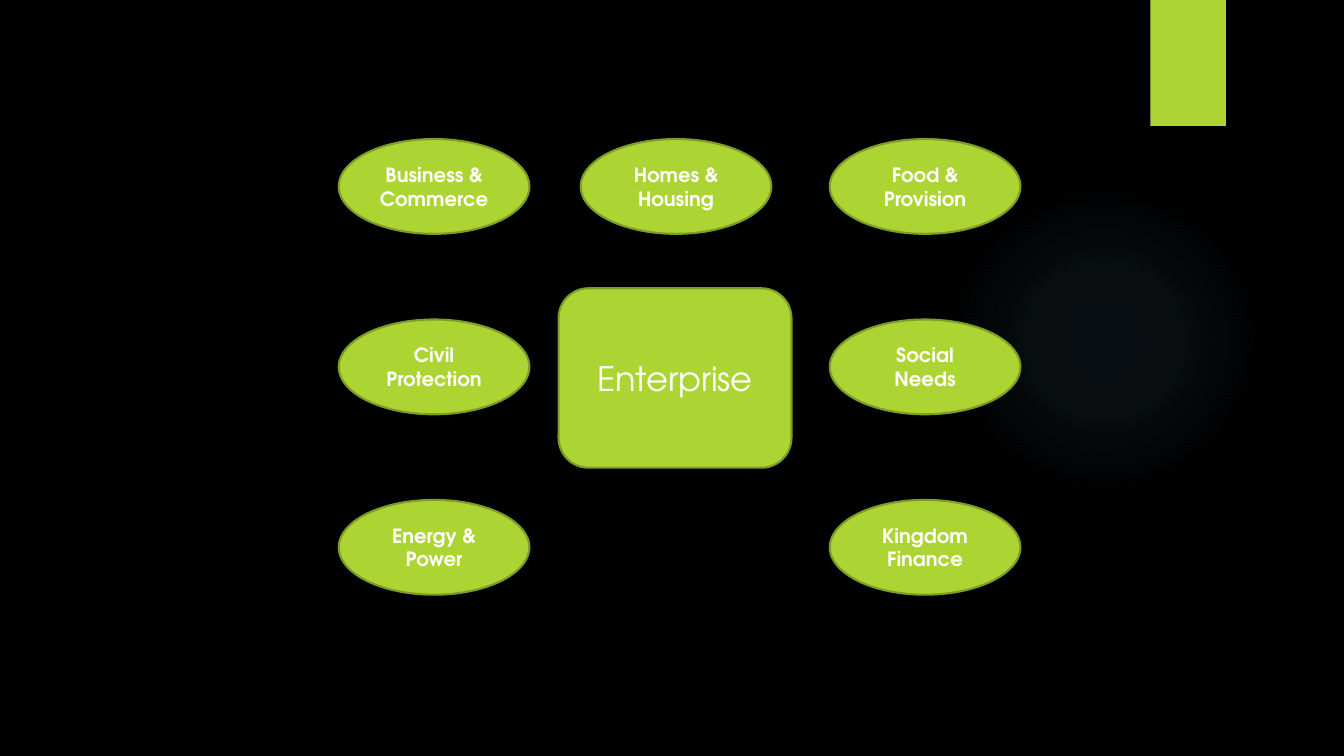
from dataclasses import dataclass

from pptx import Presentation
from pptx.dml.color import RGBColor
from pptx.enum.shapes import MSO_SHAPE
from pptx.enum.text import MSO_ANCHOR, PP_ALIGN
from pptx.oxml import parse_xml
from pptx.oxml.ns import nsdecls, qn
from pptx.shapes.autoshape import Shape
from pptx.slide import Slide
from pptx.util import Inches, Pt

BLACK = RGBColor(0x00, 0x00, 0x00)
WHITE = RGBColor(0xFF, 0xFF, 0xFF)
LIME = RGBColor(0xAC, 0xD4, 0x33)
OLIVE = RGBColor(0x7F, 0x9D, 0x26)
SKY = RGBColor(0x7A, 0xC4, 0xF0)

COLUMN_LEFTS = (3.36, 5.76, 8.23)
FIRST_ROW_TOP = 1.38
ROW_STEP = 1.79
OVAL_WIDTH, OVAL_HEIGHT = 1.89, 0.94

GLOW_STOPS = ((0, 7), (36, 6), (69, 0))
CENTRE_FORMAT = {"name": "TeX Gyre Adventor", "size": Pt(24), "bold": False}
SECTOR_FORMAT = {"name": "TeX Gyre Adventor", "size": Pt(14), "bold": True}


@dataclass(frozen=True)
class Sector:
    label: str
    column: int
    row: int


SECTORS = (
    Sector("Food & Provision", 2, 0),
    Sector("Homes & Housing", 1, 0),
    Sector("Business & Commerce", 0, 0),
    Sector("Social Needs", 2, 1),
    Sector("Civil Protection", 0, 1),
    Sector("Energy & Power", 0, 2),
    Sector("Kingdom Finance", 2, 2),
)


def add_plain_shape(page: Slide, kind: MSO_SHAPE, left: float, top: float,
                    width: float, height: float) -> Shape:
    shape = page.shapes.add_shape(
        kind, Inches(left), Inches(top), Inches(width), Inches(height))
    shape.shadow.inherit = False
    shape.fill.solid()
    shape.fill.fore_color.rgb = LIME
    shape.line.fill.background()
    return shape


def add_glow(page: Slide) -> None:
    glow = add_plain_shape(page, MSO_SHAPE.OVAL, 9.41, 1.83, 3.08, 3.08)
    stops = "".join(
        f'<a:gs pos="{position * 1000}"><a:srgbClr val="{SKY}">'
        f'<a:alpha val="{opacity * 1000}"/></a:srgbClr></a:gs>'
        for position, opacity in GLOW_STOPS)
    gradient = parse_xml(
        f'<a:gradFill {nsdecls("a")} rotWithShape="1"><a:gsLst>{stops}</a:gsLst>'
        '<a:path path="circle"><a:fillToRect l="50000" t="50000" r="50000" b="50000"/>'
        '</a:path></a:gradFill>')
    properties = glow.element.spPr
    properties.replace(properties.find(qn("a:solidFill")), gradient)


def add_labelled_shape(page: Slide, kind: MSO_SHAPE, left: float, top: float,
                       width: float, height: float, label: str,
                       text_format: dict[str, object]) -> None:
    shape = add_plain_shape(page, kind, left, top, width, height)
    shape.line.color.rgb = OLIVE
    shape.line.width = Pt(1.5)
    frame = shape.text_frame
    frame.word_wrap = True
    frame.vertical_anchor = MSO_ANCHOR.MIDDLE
    para = frame.paragraphs[0]
    para.alignment = PP_ALIGN.CENTER
    span = para.add_run()
    span.text = label
    for attribute, value in text_format.items():
        setattr(span.font, attribute, value)
    span.font.color.rgb = WHITE


def main() -> None:
    deck = Presentation()
    deck.slide_width, deck.slide_height = Inches(13.33), Inches(7.5)
    page = deck.slides.add_slide(deck.slide_layouts[6])
    page.background.fill.solid()
    page.background.fill.fore_color.rgb = BLACK

    add_glow(page)
    add_plain_shape(page, MSO_SHAPE.RECTANGLE, 11.41, 0, 0.75, 1.25)
    add_labelled_shape(page, MSO_SHAPE.ROUNDED_RECTANGLE, 5.54, 2.86, 2.31, 1.78,
                       "Enterprise", CENTRE_FORMAT)
    for sector in SECTORS:
        add_labelled_shape(page, MSO_SHAPE.OVAL, COLUMN_LEFTS[sector.column],
                           FIRST_ROW_TOP + sector.row * ROW_STEP,
                           OVAL_WIDTH, OVAL_HEIGHT, sector.label, SECTOR_FORMAT)
    deck.save("out.pptx")


if __name__ == "__main__":
    main()
